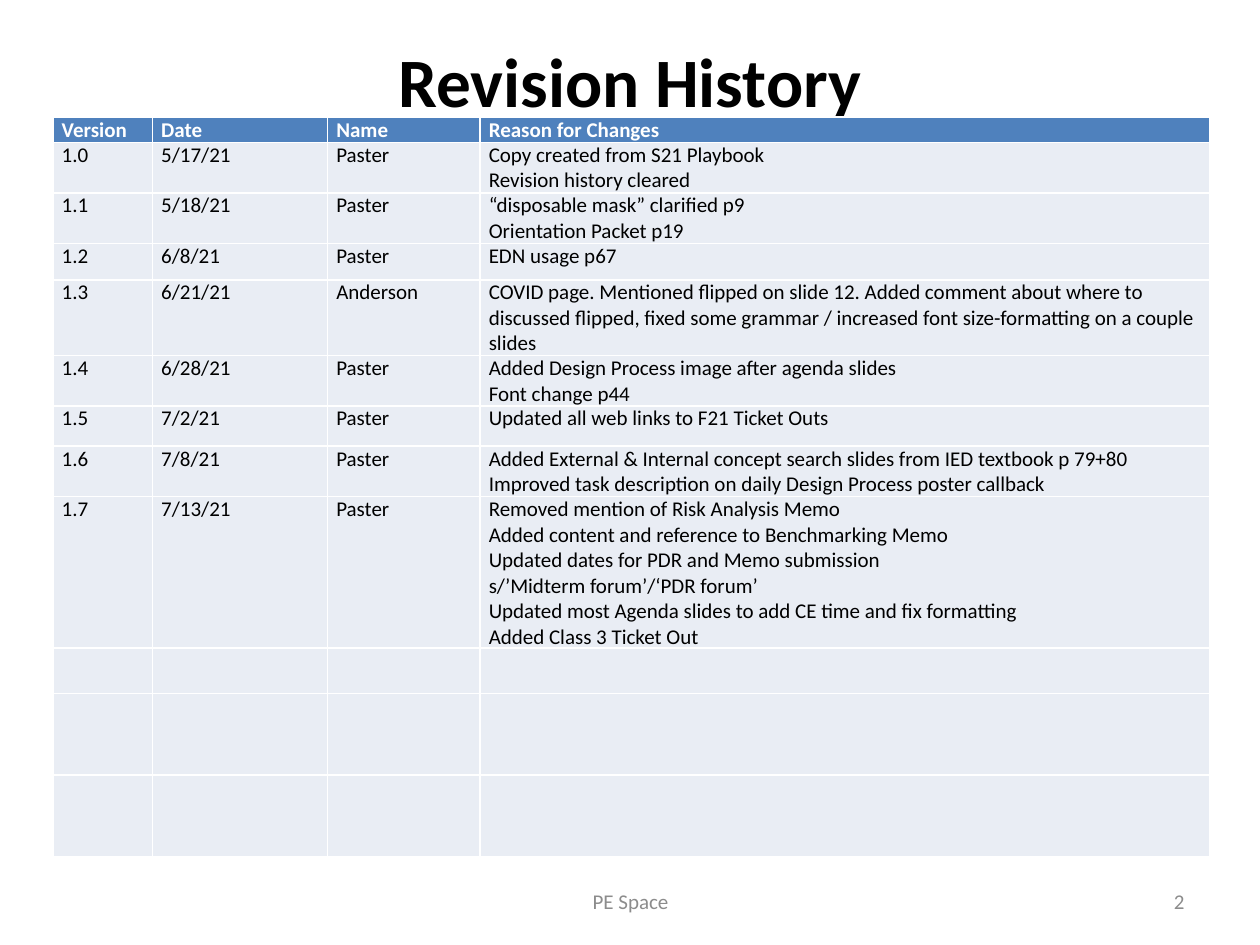
from pptx import Presentation
from pptx.dml.color import RGBColor
from pptx.enum.text import MSO_ANCHOR as ANCHOR, PP_ALIGN as ALIGN
from pptx.util import Inches, Pt


def style(p, size, color, bold=False):
    p.font.name = "Calibri"
    p.font.size = Pt(size)
    p.font.bold = bold
    p.font.color.rgb = RGBColor.from_string(color)


def add_text(s, box, text, size, color, align, anchor, bold=False):
    tf = s.shapes.add_textbox(*map(Inches, box)).text_frame
    tf.word_wrap = True
    tf.vertical_anchor = anchor
    tf.margin_top = tf.margin_bottom = 0
    p = tf.paragraphs[0]
    p.text = text
    p.alignment = align
    style(p, size, color, bold)


prs = Presentation()
prs.slide_width, prs.slide_height = Inches(10), Inches(7.5)
s = prs.slides.add_slide(prs.slide_layouts[6])

add_text(s, (0.5, 0.3, 9, 1.25), "Revision History", 39.6, "000000",
         ALIGN.CENTER, ANCHOR.TOP, bold=True)

# Row height, then the text of the four columns; rows grow to fit their text
BLANK = ("", "", "", "")
rows = [
    (0.15, "Version", "Date", "Name", "Reason for Changes"),
    (0.29, "1.0", "5/17/21", "Paster",
     "Copy created from S21 Playbook\nRevision history cleared"),
    (0.15, "1.1", "5/18/21", "Paster",
     "“disposable mask” clarified p9\nOrientation Packet p19"),
    (0.29, "1.2", "6/8/21", "Paster", "EDN usage p67"),
    (0.32, "1.3", "6/21/21", "Anderson",
     "COVID page. Mentioned flipped on slide 12. Added comment about where to "
     "discussed flipped, fixed some grammar / increased font size-formatting "
     "on a couple slides"),
    (0.1, "1.4", "6/28/21", "Paster",
     "Added Design Process image after agenda slides\nFont change p44"),
    (0.32, "1.5", "7/2/21", "Paster", "Updated all web links to F21 Ticket Outs"),
    (0.3, "1.6", "7/8/21", "Paster",
     "Added External & Internal concept search slides from IED textbook p 79+80\n"
     "Improved task description on daily Design Process poster callback"),
    (0.3, "1.7", "7/13/21", "Paster",
     "Removed mention of Risk Analysis Memo\n"
     "Added content and reference to Benchmarking Memo\n"
     "Updated dates for PDR and Memo submission\n"
     "s/’Midterm forum’/‘PDR forum’\n"
     "Updated most Agenda slides to add CE time and fix formatting\n"
     "Added Class 3 Ticket Out"),
    (0.36, *BLANK),
    (0.65, *BLANK),
    (0.65, *BLANK),
]
widths = [0.79, 1.39, 1.21, 5.79]

# The default table style supplies the white cell borders
table = s.shapes.add_table(len(rows), len(widths), Inches(0.42), Inches(0.93),
                           Inches(9.17), Inches(5.86)).table
table.horz_banding = False
for col, width in zip(table.columns, widths):
    col.width = Inches(width)

for i, (height, *texts) in enumerate(rows):
    header = i == 0
    table.rows[i].height = Inches(height)
    for j, text in enumerate(texts):
        cell = table.cell(i, j)
        cell.margin_left = cell.margin_right = Inches(0.07)
        cell.margin_top = cell.margin_bottom = 0
        cell.fill.solid()
        cell.fill.fore_color.rgb = RGBColor.from_string("4F81BD" if header else "E9EDF4")
        cell.text = text
        for p in cell.text_frame.paragraphs:
            style(p, 12, "FFFFFF" if header else "000000", bold=header)

add_text(s, (3.42, 6.95, 3.17, 0.4), "PE Space", 12, "8C8C8C",
         ALIGN.CENTER, ANCHOR.MIDDLE)
add_text(s, (7.17, 6.95, 2.33, 0.4), "2", 12, "8C8C8C", ALIGN.RIGHT, ANCHOR.MIDDLE)

prs.save("out.pptx")
